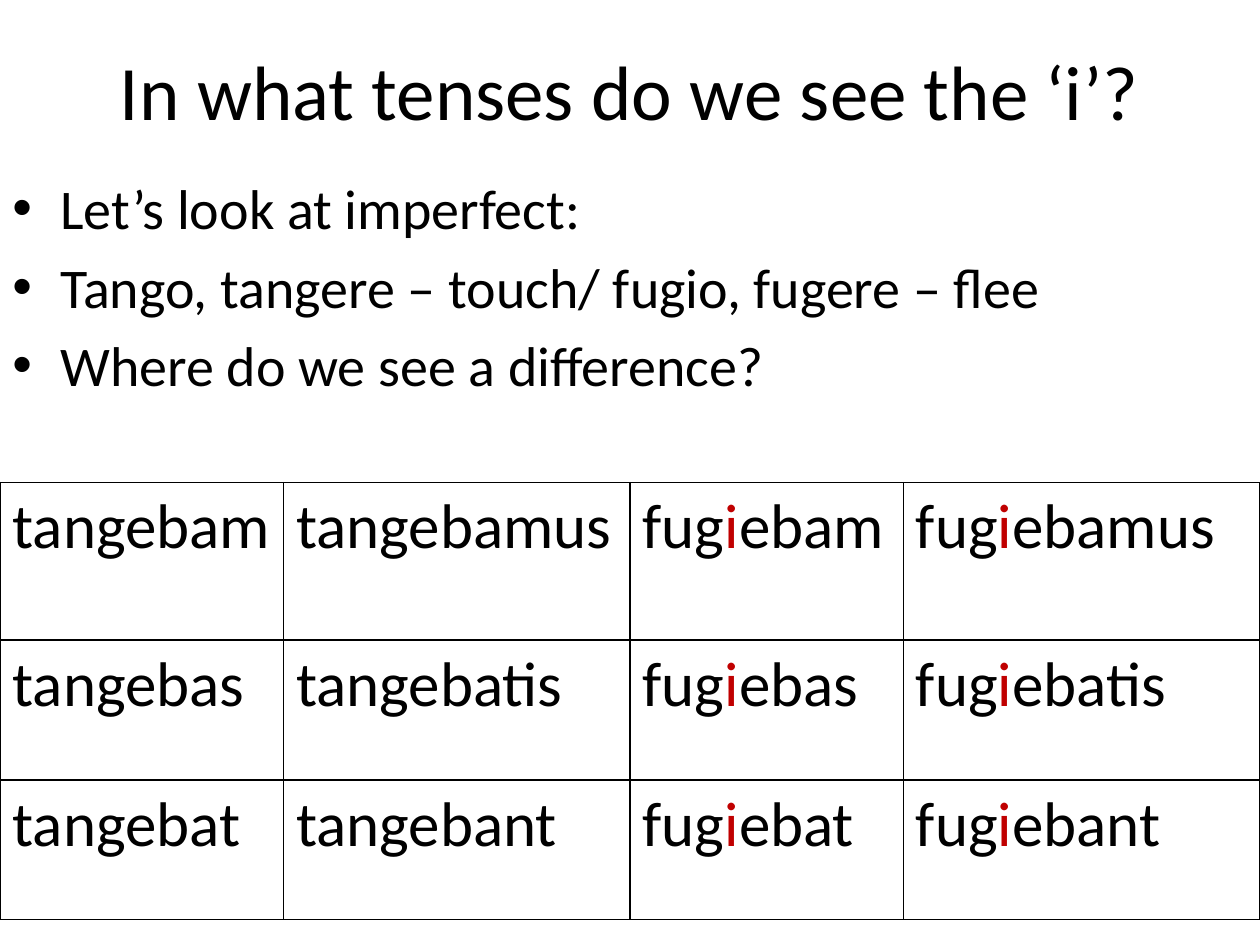
from lxml.etree import SubElement
from pptx import Presentation
from pptx.dml.color import RGBColor
from pptx.enum.text import MSO_ANCHOR as Anchor, PP_ALIGN as Align
from pptx.oxml.ns import qn
from pptx.util import Inches, Pt

BLACK = RGBColor(0x00, 0x00, 0x00)
RED = RGBColor(0xC0, 0x00, 0x00)
FONT = "Calibri"

BULLETS = [
    "Let’s look at imperfect:",
    "Tango, tangere – touch/ fugio, fugere – flee",
    "Where do we see a difference?",
]
# Each row holds one person: singular and plural ending
ENDINGS = [("ebam", "ebamus"), ("ebas", "ebatis"), ("ebat", "ebant")]
STEMS = [("tang", ""), ("fug", "i")]
COLUMN_WIDTHS = [2.25, 2.75, 2.17, 2.83]
ROW_HEIGHTS = [1.25, 1.11, 1.11]


def set_font(para, size):
    para.font.name = FONT
    para.font.size = Pt(size)
    para.font.color.rgb = BLACK


def add_text_frame(page, left, top, width, height):
    box = page.shapes.add_textbox(Inches(left), Inches(top), Inches(width), Inches(height))
    box.text_frame.word_wrap = True
    return box.text_frame


def add_title(page, left, top, width, height):
    frame = add_text_frame(page, left, top, width, height)
    frame.vertical_anchor = Anchor.MIDDLE
    para = frame.paragraphs[0]
    para.text = "In what tenses do we see the ‘i’?"
    para.alignment = Align.CENTER
    set_font(para, 44)


def add_bullets(page, left, top, width, height):
    frame = add_text_frame(page, left, top, width, height)
    for index, text in enumerate(BULLETS):
        para = frame.add_paragraph() if index else frame.paragraphs[0]
        para.text = text
        para.space_before = Pt(6.4)
        set_font(para, 32)
        # Hanging indent with a round bullet
        properties = para._p.get_or_add_pPr()
        properties.set("marL", str(Inches(0.38)))
        properties.set("indent", str(-Inches(0.38)))
        SubElement(properties, qn("a:buFont"), typeface="Arial")
        SubElement(properties, qn("a:buChar"), char="•")


def add_borders(cell):
    properties = cell._tc.get_or_add_tcPr()
    for position, side in enumerate(("lnL", "lnR", "lnT", "lnB")):
        line = SubElement(properties, qn(f"a:{side}"), w=str(Pt(1)))
        fill = SubElement(line, qn("a:solidFill"))
        SubElement(fill, qn("a:srgbClr"), val=str(BLACK))
        properties.insert(position, line)  # borders come before the fill


def fill_cell(cell, stem, vowel, ending):
    cell.fill.background()
    add_borders(cell)
    para = cell.text_frame.paragraphs[0]
    set_font(para, 36)
    if not vowel:
        para.add_run().text = stem + ending
        return
    for text, color in ((stem, BLACK), (vowel, RED), (ending, BLACK)):
        span = para.add_run()
        span.text = text
        span.font.color.rgb = color


def add_verb_table(page, left, top, width, height):
    table = page.shapes.add_table(
        len(ROW_HEIGHTS), len(COLUMN_WIDTHS),
        Inches(left), Inches(top), Inches(width), Inches(height),
    ).table
    table.first_row = False
    table.horz_banding = False
    for column, size in zip(table.columns, COLUMN_WIDTHS):
        column.width = Inches(size)
    for row, size in zip(table.rows, ROW_HEIGHTS):
        row.height = Inches(size)
    for row, endings in zip(table.rows, ENDINGS):
        forms = [(stem, vowel, ending) for stem, vowel in STEMS for ending in endings]
        for cell, form in zip(row.cells, forms):
            fill_cell(cell, *form)


def main():
    deck = Presentation()
    deck.slide_width, deck.slide_height = Inches(10), Inches(7.5)
    page = deck.slides.add_slide(deck.slide_layouts[6])
    add_title(page, 0, 0, 10, 1.42)
    add_bullets(page, 0, 1.33, 10, 6.17)
    add_verb_table(page, 0, 3.83, 10, 3.47)
    deck.save("out.pptx")


if __name__ == "__main__":
    main()
